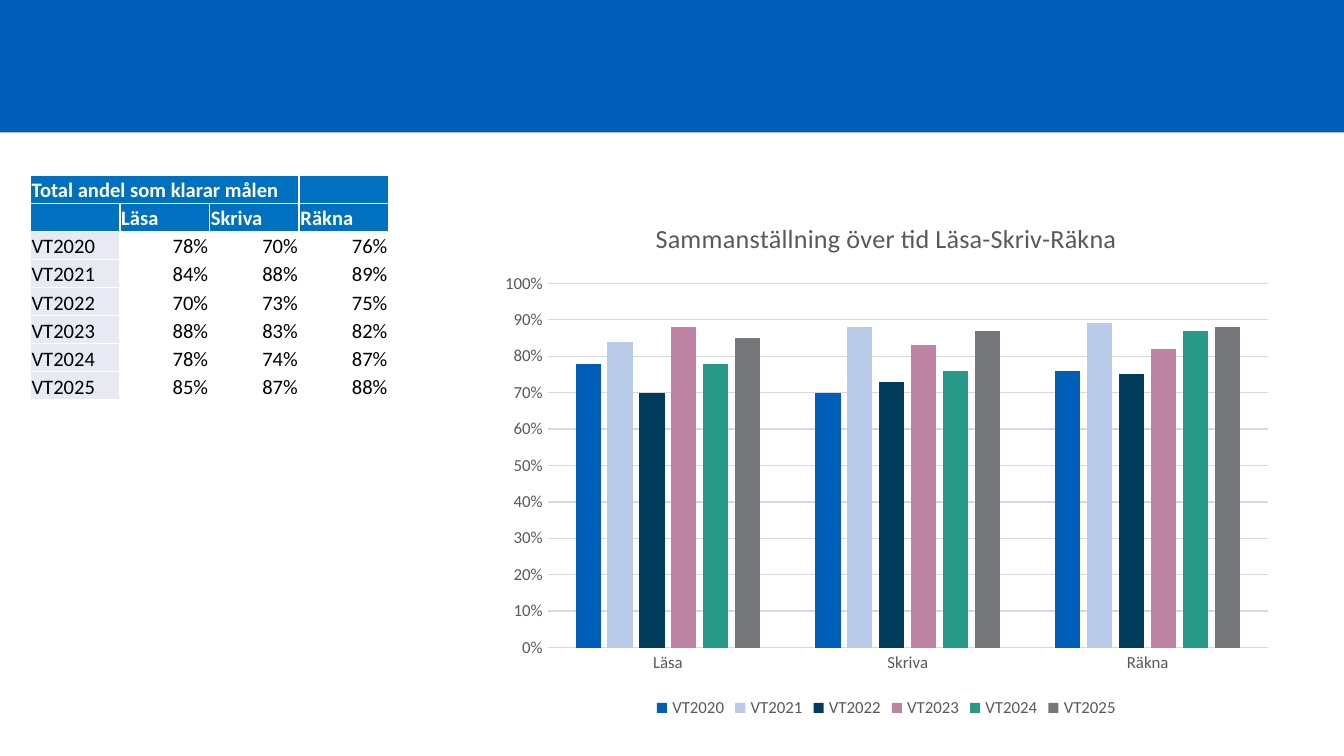
from lxml.etree import SubElement
from pptx import Presentation
from pptx.chart.data import CategoryChartData
from pptx.dml.color import RGBColor
from pptx.enum.chart import XL_CHART_TYPE as ChartType, XL_LEGEND_POSITION as LegendPosition
from pptx.enum.chart import XL_TICK_MARK as TickMark
from pptx.enum.shapes import MSO_SHAPE as Shape
from pptx.enum.text import MSO_ANCHOR as Anchor, PP_ALIGN as Align
from pptx.oxml.ns import qn
from pptx.util import Inches, Pt

COLORS = {
    "banner": "005EB8", "header": "0070C0", "label": "E7EAF3", "white": "FFFFFF",
    "black": "000000", "muted": "595959", "grid": "D9D9D9",
}
SUBJECTS = ["Läsa", "Skriva", "Räkna"]
TABLE_RESULTS = {
    "VT2020": [0.78, 0.70, 0.76],
    "VT2021": [0.84, 0.88, 0.89],
    "VT2022": [0.70, 0.73, 0.75],
    "VT2023": [0.88, 0.83, 0.82],
    "VT2024": [0.78, 0.74, 0.87],
    "VT2025": [0.85, 0.87, 0.88],
}
# The chart shows a different value for Skriva in VT2024 than the table.
CHART_RESULTS = TABLE_RESULTS | {"VT2024": [0.78, 0.76, 0.87]}
TERM_COLORS = ["005EB8", "B8CCEA", "003B5C", "BE83A3", "279989", "75787B"]


def rgb(name):
    return RGBColor.from_string(COLORS.get(name, name))


def paint(fill, color):
    fill.solid()
    fill.fore_color.rgb = rgb(color)


class ResultSlide:
    """Slide on a grid of 100 columns, with square units a tenth of an inch wide."""

    font_name = "Calibri"
    unit = Inches(0.1)

    def __init__(self, deck):
        self.slide = deck.slides.add_slide(deck.slide_layouts[6])

    def place(self, *lengths):
        return [round(length * self.unit) for length in lengths]

    def style(self, font, size, color, bold=False):
        font.name, font.size, font.bold = self.font_name, Pt(size), bold
        font.color.rgb = rgb(color)

    def banner(self, columns, rows):
        band = self.slide.shapes.add_shape(Shape.RECTANGLE, *self.place(0, 0, columns, rows))
        band.shadow.inherit = False
        paint(band.fill, "banner")
        band.line.fill.background()

    def borders(self, cell):
        """Give the cell thin white edges, placed before its fill."""
        properties = cell._tc.get_or_add_tcPr()
        for position, side in enumerate(("lnL", "lnR", "lnT", "lnB")):
            edge = SubElement(properties, qn(f"a:{side}"), w=str(Pt(1)))
            fill = SubElement(edge, qn("a:solidFill"))
            SubElement(fill, qn("a:srgbClr"), val=COLORS["white"])
            properties.insert(position, edge)

    def cell(self, cell, text, fill, color, bold, align):
        self.borders(cell)
        if fill:
            paint(cell.fill, fill)
        else:
            cell.fill.background()
        cell.vertical_anchor = Anchor.BOTTOM
        cell.margin_left = cell.margin_right = cell.margin_top = Inches(0.01)
        cell.margin_bottom = 0
        paragraph = cell.text_frame.paragraphs[0]
        paragraph.alignment = align
        if text:
            run = paragraph.add_run()
            run.text = text
            self.style(run.font, 11, color, bold)
        else:
            SubElement(paragraph._p, qn("a:endParaRPr"), sz="1100")

    def table(self, left, top, column_width, row_height, heading, subjects, results):
        rows = [[heading, "", "", ""], ["", *subjects]]
        rows += [[term, *(f"{share:.0%}" for share in shares)] for term, shares in results.items()]
        size = self.place(left, top, column_width * 4, row_height * len(rows))
        table = self.slide.shapes.add_table(len(rows), 4, *size).table
        table.first_row = table.horz_banding = False
        for column in table.columns:
            column.width = round(column_width * self.unit)
        for r, texts in enumerate(rows):
            table.rows[r].height = round(row_height * self.unit)
            for c, text in enumerate(texts):
                if r < 2:
                    look = ("header", "white", True, Align.LEFT)
                elif c == 0:
                    look = ("label", "black", False, Align.LEFT)
                else:
                    look = (None, "black", False, Align.RIGHT)
                self.cell(table.cell(r, c), text, *look)
        table.cell(0, 0).merge(table.cell(0, 2))

    def chart(self, left, top, columns, rows, heading, subjects, results):
        data = CategoryChartData(number_format="0%")
        data.categories = subjects
        for term, shares in results.items():
            data.add_series(term, shares)
        chart = self.slide.shapes.add_chart(
            ChartType.COLUMN_CLUSTERED, *self.place(left, top, columns, rows), data).chart
        self.style(chart.font, 10, "black")
        run = chart.chart_title.text_frame.paragraphs[0].add_run()
        run.text = heading
        self.style(run.font, 14, "muted")
        chart.chart_title.include_in_layout = False

        plot = chart.plots[0]
        plot.gap_width, plot.overlap, plot.vary_by_categories = 219, -27, False
        for series, color in zip(plot.series, TERM_COLORS):
            paint(series.format.fill, color)
            series.invert_if_negative = False
        self.axes(chart.category_axis, chart.value_axis)
        chart.has_legend = True
        chart.legend.position = LegendPosition.BOTTOM
        chart.legend.include_in_layout = False
        self.style(chart.legend.font, 9, "muted")

    def axes(self, subject_axis, share_axis):
        for axis in (subject_axis, share_axis):
            axis.major_tick_mark = axis.minor_tick_mark = TickMark.NONE
            self.style(axis.tick_labels.font, 9, "muted")
        subject_axis.has_major_gridlines = False
        share_axis.minimum_scale, share_axis.maximum_scale, share_axis.major_unit = 0, 1, 0.1
        share_axis.tick_labels.number_format = "0%"
        share_axis.tick_labels.number_format_is_linked = False
        share_axis.format.line.fill.background()
        for line in (subject_axis.format.line, share_axis.major_gridlines.format.line):
            line.color.rgb = rgb("grid")
            line.width = Pt(0.75)


def main():
    deck = Presentation()
    deck.slide_width = Inches(10)
    deck.slide_height = deck.slide_width * 9 // 16
    page = ResultSlide(deck)
    page.banner(100, 9.85)
    page.table(2.25, 13.05, 6.67, 2.09, "Total andel som klarar målen", SUBJECTS, TABLE_RESULTS)
    page.chart(36.4, 14.7, 59.1, 39.1, "Sammanställning över tid Läsa-Skriv-Räkna",
               SUBJECTS, CHART_RESULTS)
    deck.save("out.pptx")


if __name__ == "__main__":
    main()
